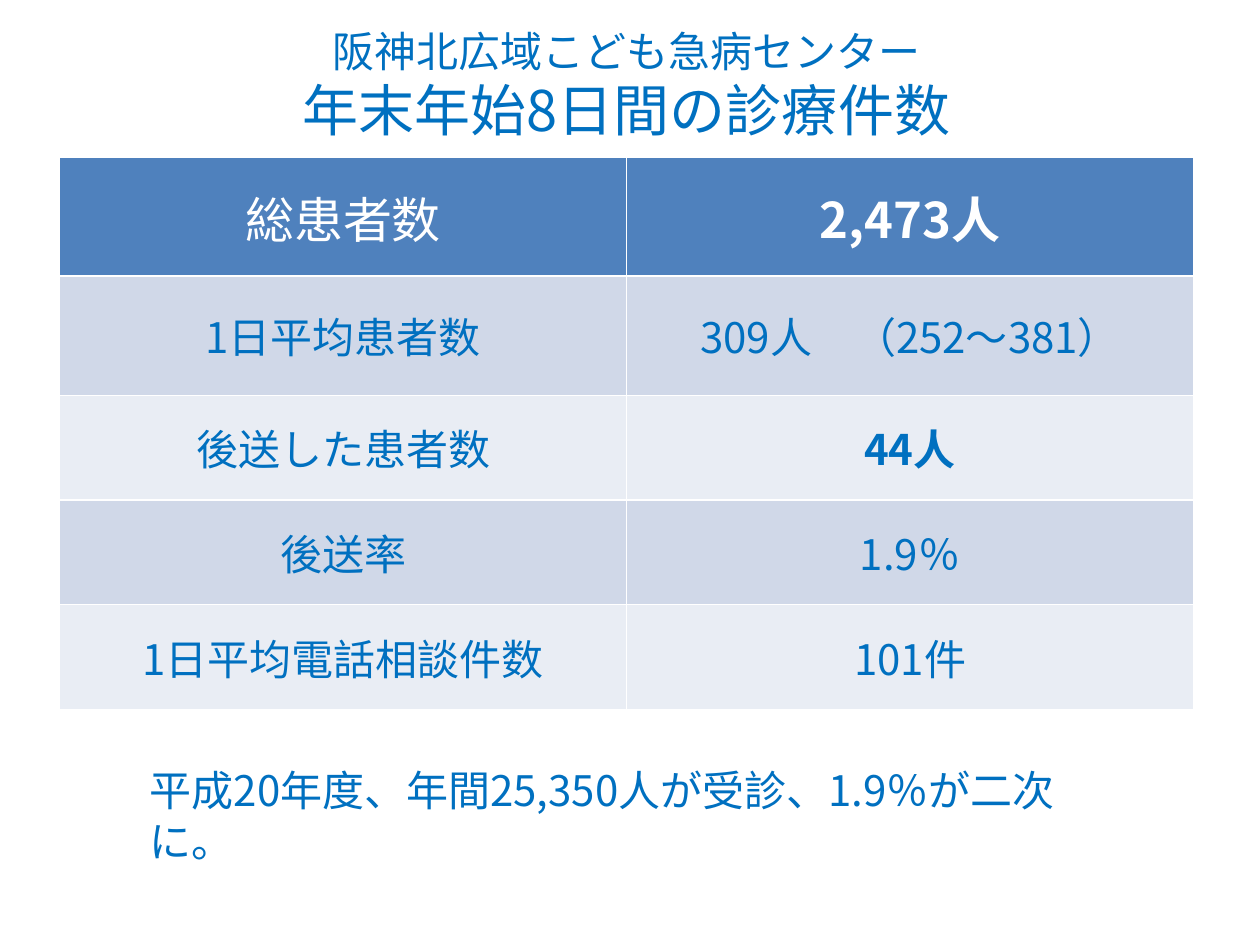
"""Build the slide on year-end consultations at a children's emergency centre."""
from lxml.etree import SubElement
from pptx import Presentation
from pptx.dml.color import RGBColor
from pptx.enum.text import MSO_ANCHOR as Anchor, PP_ALIGN as Align
from pptx.oxml.ns import qn
from pptx.util import Cm, Pt

FONT = "Noto Sans CJK JP"
COLORS = {"text": "0070C0", "white": "FFFFFF", "header": "4F81BD",
          "odd": "D0D8E8", "even": "E9EDF4"}


def add_span(para, text, size, color="text", bold=False):
    span = para.add_run()
    span.text = text
    span.font.size = Pt(size)
    span.font.bold = bold
    span.font.name = FONT
    span.font.color.rgb = RGBColor.from_string(COLORS[color])
    SubElement(span.font._element, qn("a:ea")).set("typeface", FONT)


deck = Presentation()
deck.slide_width = Cm(25.4)
deck.slide_height = Cm(19.05)
page = deck.slides.add_slide(deck.slide_layouts[6])

title = page.shapes.add_textbox(Cm(1.2), Cm(0), Cm(22.86), Cm(3.38)).text_frame
title.word_wrap = True
title.vertical_anchor = Anchor.MIDDLE
para = title.paragraphs[0]
para.alignment = Align.CENTER
add_span(para, "阪神北広域こども急病センター", 24)
para.add_line_break()
add_span(para, "年末年始8日間の診療件数", 32)

rows = [
    ("総患者数", "2,473人", 2.38),
    ("1日平均患者数", "309人　（252～381）", 2.41),
    ("後送した患者数", "44人", 2.11),
    ("後送率", "1.9％", 2.11),
    ("1日平均電話相談件数", "101件", 2.11),
]
bold_values = {"2,473人", "44人"}
table = page.shapes.add_table(len(rows), 2, Cm(1.2), Cm(3.18), Cm(22.86), Cm(11.12)).table
for index, (label, value, height) in enumerate(rows):
    table.rows[index].height = Cm(height)
    header = index == 0
    fill = "header" if header else "odd" if index % 2 else "even"
    for column, text in enumerate((label, value)):
        cell = table.cell(index, column)
        cell.fill.solid()
        cell.fill.fore_color.rgb = RGBColor.from_string(COLORS[fill])
        cell.vertical_anchor = Anchor.MIDDLE
        para = cell.text_frame.paragraphs[0]
        para.alignment = Align.CENTER
        add_span(para, text, 28 if header else 24,
                 "white" if header else "text", text in bold_values)

note = page.shapes.add_textbox(Cm(2.77), Cm(15.29), Cm(19.5), Cm(1.3)).text_frame
note.word_wrap = True
add_span(note.paragraphs[0], "平成20年度、年間25,350人が受診、1.9％が二次に。", 24)

deck.save("out.pptx")
